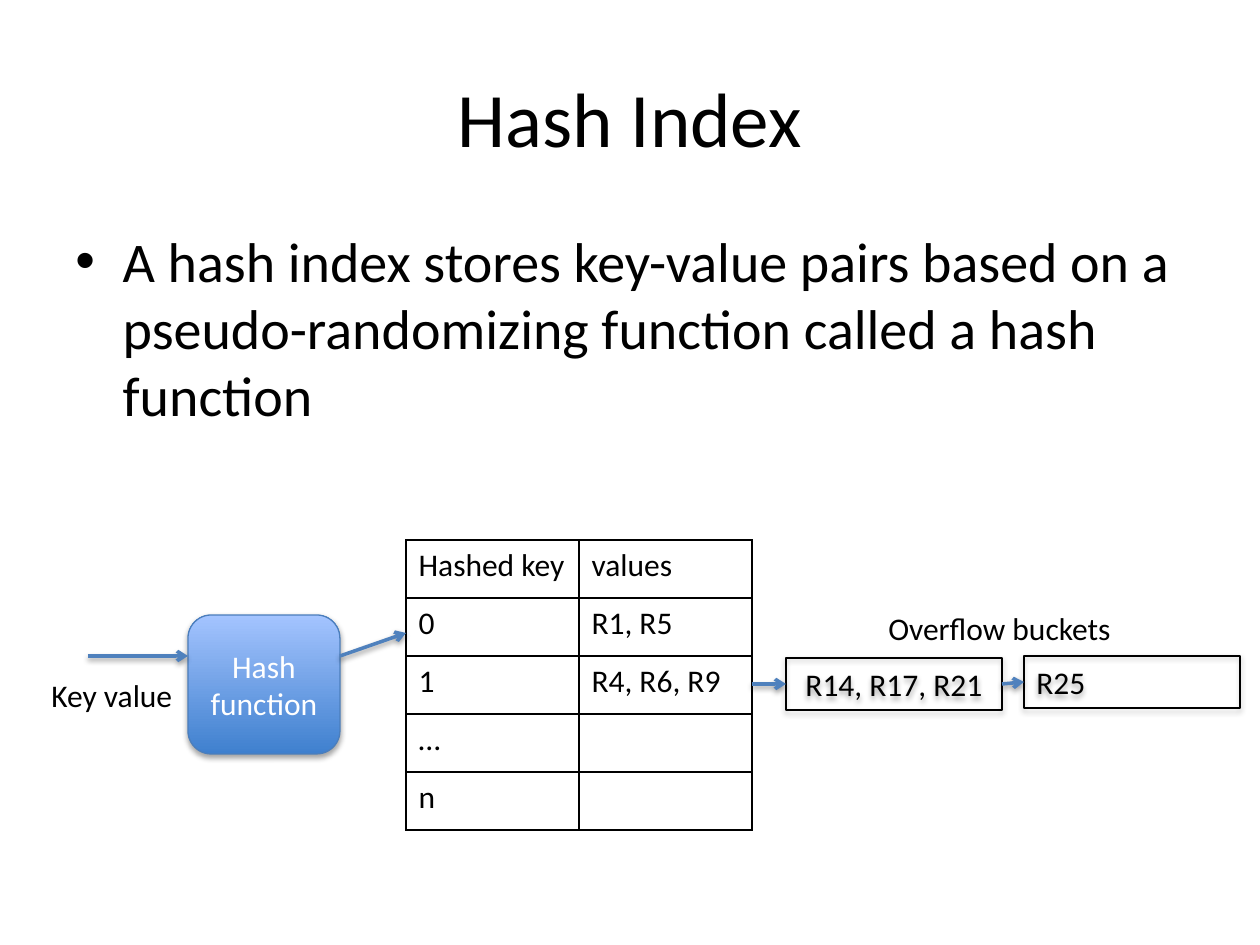
from lxml import etree
from pptx import Presentation
from pptx.dml.color import RGBColor
from pptx.enum import shapes, text
from pptx.oxml import ns
from pptx import util as u

SCALE = u.Inches(1) / 126
FONT = "Calibri"
COLORS = {
    "ink": "000000",
    "paper": "FFFFFF",
    "arrow": "4F81BD",
    "edge": "4B7EBC",
    "deep": "3F80CE",
    "pale": "A4C4FF",
}
ROWS = [
    ("Hashed key", "values"),
    ("0", "R1, R5"),
    ("1", "R4, R6, R9"),
    ("…", ""),
    ("n", ""),
]


def px(*lengths):
    return [u.Emu(round(length * SCALE)) for length in lengths]


def color(name):
    return RGBColor.from_string(COLORS[name])


def child(parent, tag, **attributes):
    return etree.SubElement(parent, ns.qn(tag), **attributes)


def write(frame, content, size=18, ink="ink", align="LEFT", anchor="TOP", wrap=True):
    frame.word_wrap = wrap
    frame.vertical_anchor = text.MSO_ANCHOR[anchor]
    for index, line in enumerate(content.split("\n")):
        paragraph = frame.add_paragraph() if index else frame.paragraphs[0]
        paragraph.alignment = text.PP_ALIGN[align]
        run = paragraph.add_run()
        run.text = line
        run.font.name = FONT
        run.font.size = u.Pt(size)
        run.font.color.rgb = color(ink)
    return frame.paragraphs[0]


def add_label(slide, box, content, **style):
    return write(slide.shapes.add_textbox(*px(*box)).text_frame, content, **style)


def add_shadow(properties, distance, opacity):
    effects = child(properties, "a:effectLst")
    shadow = child(effects, "a:outerShdw", blurRad="40000", dist=str(distance),
                   dir="5400000", rotWithShape="0")
    child(child(shadow, "a:srgbClr", val=COLORS["ink"]), "a:alpha", val=str(opacity))


def add_arrow(slide, start, end):
    arrow = slide.shapes.add_connector(shapes.MSO_CONNECTOR.STRAIGHT, *px(*start, *end))
    arrow.line.color.rgb = color("arrow")
    arrow.line.width = u.Pt(2)
    child(arrow.line._get_or_add_ln(), "a:tailEnd", type="arrow")
    add_shadow(arrow._element.spPr, 20000, 38000)


def add_block(slide, kind, box, content, edge, gradient=None, **style):
    shape = slide.shapes.add_shape(shapes.MSO_SHAPE[kind], *px(*box))
    if gradient:
        shape.fill.gradient()
        shape.fill.gradient_angle = 90
        for position, (stop, name) in enumerate(zip(shape.fill.gradient_stops, gradient)):
            stop.position = position
            stop.color.rgb = color(name)
    else:
        shape.fill.background()
    shape.line.color.rgb = color(edge)
    shape.line.width = u.Pt(0.75)
    add_shadow(shape._element.spPr, 23000, 35000)
    write(shape.text_frame, content, anchor="MIDDLE", **style)


def add_heading(slide, box):
    add_label(slide, box, "Hash Index", size=44, align="CENTER", anchor="MIDDLE")


def add_body(slide, box):
    paragraph = add_label(
        slide, box,
        "A hash index stores key-value pairs based on a "
        "pseudo-randomizing function called a hash function",
        size=32,
    )
    paragraph.space_before = u.Pt(6.4)
    properties = paragraph._p.get_or_add_pPr()
    properties.set("marL", "342900")
    properties.set("indent", "-342900")
    child(properties, "a:buFont", typeface="Arial")
    child(properties, "a:buChar", char="•")


def add_hashing(slide, box):
    left, top, width, height = box
    add_label(slide, (left, top + 55, 149, 50), "Key value", wrap=False)
    block = (left + 149, top, 152, height)
    add_block(slide, "ROUNDED_RECTANGLE", block, "Hash\nfunction", "edge",
              gradient=("deep", "pale"), ink="paper", align="CENTER")
    add_arrow(slide, (left + 49, top + 41), (left + 149, top + 41))
    add_arrow(slide, (left + 301, top + 41), (left + width, top + 18))


def border_cell(cell):
    properties = cell._tc.get_or_add_tcPr()
    for side in ("a:lnL", "a:lnR", "a:lnT", "a:lnB"):
        line = child(properties, side, w=str(u.Pt(1)))
        child(child(line, "a:solidFill"), "a:srgbClr", val=COLORS["ink"])
    cell.fill.background()


def add_index_table(slide, box):
    table = slide.shapes.add_table(len(ROWS), len(ROWS[0]), *px(*box)).table
    table.first_row = table.horz_banding = False
    for row, values in zip(table.rows, ROWS):
        row.height = px(box[3] / len(ROWS))[0]
        for cell, value in zip(row.cells, values):
            border_cell(cell)
            if value:
                write(cell.text_frame, value)


def add_overflow(slide, box):
    left, top, width, height = box
    bucket_width = 216
    first, second = left + 34, left + width - bucket_width
    add_block(slide, "RECTANGLE", (first, top + 55, bucket_width, 52),
              "R14, R17, R21", "ink", align="CENTER")
    add_block(slide, "RECTANGLE", (second, top + 53, bucket_width, 52), "R25", "ink")
    add_arrow(slide, (left, top + 81), (first, top + 81))
    add_arrow(slide, (first + bucket_width, top + 81), (second, top + 79))
    add_label(slide, (left + 124, top, 252, 50), "Overflow buckets", wrap=False)


def main():
    presentation = Presentation()
    presentation.slide_width, presentation.slide_height = px(1260, 945)
    slide = presentation.slides.add_slide(presentation.slide_layouts[6])
    add_heading(slide, (63, 38, 1134, 158))
    add_body(slide, (63, 220, 1134, 624))
    add_index_table(slide, (406, 540, 346, 290))
    add_overflow(slide, (752, 603, 488, 107))
    add_hashing(slide, (39, 615, 367, 139))
    presentation.save("out.pptx")


if __name__ == "__main__":
    main()
